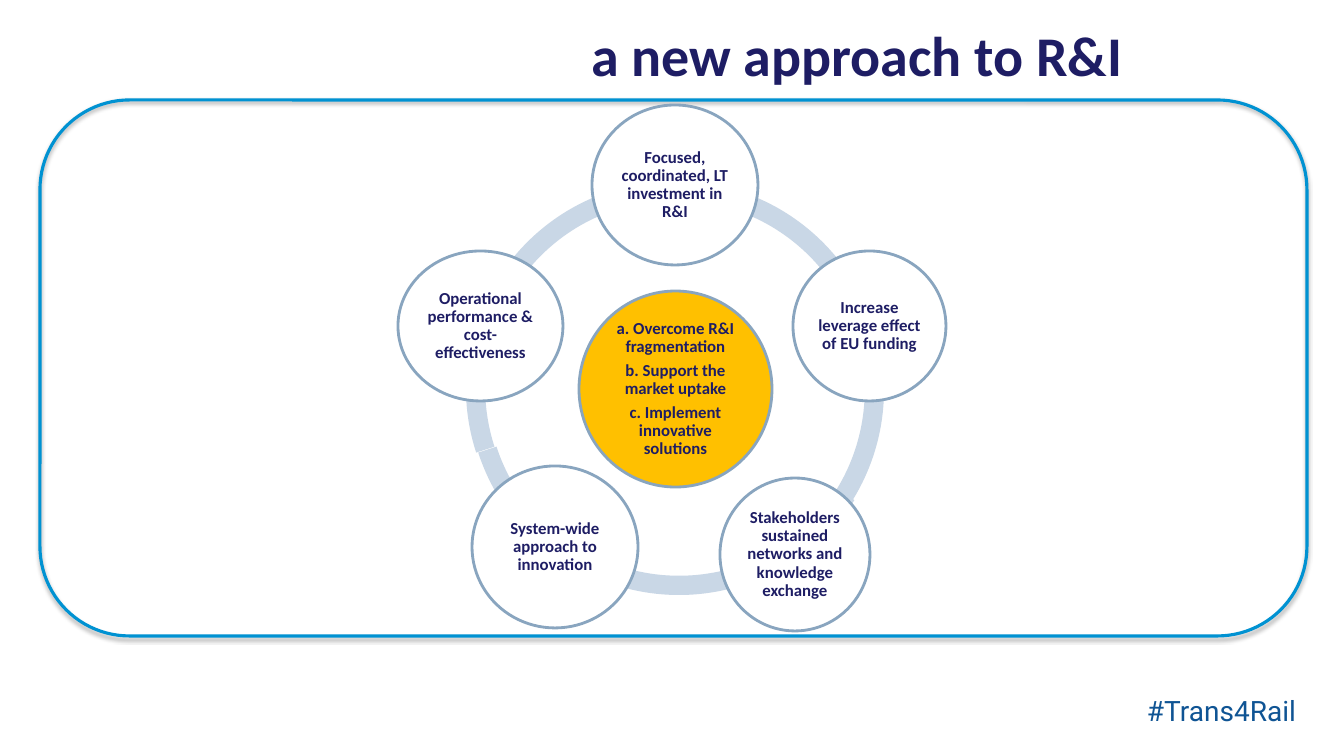
from lxml.etree import SubElement
from pptx import Presentation
from pptx.dml.color import RGBColor
from pptx.enum.shapes import MSO_SHAPE
from pptx.enum.text import MSO_ANCHOR, PP_ALIGN
from pptx.oxml.ns import qn
from pptx.util import Emu, Pt

SCALE = 914400 / 100.8
NAVY, SKY, STEEL, PALE = "1E1D64", "0092D2", "89A5BF", "C9D7E6"
RING = 418
ARC_DEPTH = 0.046

# left, top, start angle, end angle
ARCS = [
    (468, 179, 118.8, 162),
    (470, 177, 75.98, 117.76),
    (471, 176, 33.43, 76.64),
    (466, 181, 205.2, 32.4),
    (466, 179, 162, 205.2),
]

# left, top, width, height, fill, paragraphs
CIRCLES = [
    (579, 291, 193, 196, "FFC000", [
        "a. Overcome R&I fragmentation",
        "b. Support the market uptake",
        "c. Implement innovative solutions"]),
    (592, 105, 166, 160, "FFFFFF",
     ["Focused, coordinated, LT investment in R&I"]),
    (793, 251, 153, 150, "FFFFFF",
     ["Increase leverage effect of EU funding"]),
    (720, 478, 150, 153, "FFFFFF",
     ["Stakeholders sustained networks and knowledge exchange"]),
    (472, 466, 166, 162, "FFFFFF",
     ["System-wide approach to innovation"]),
    (398, 251, 165, 150, "FFFFFF",
     ["Operational performance & cost-effectiveness"]),
]


def px(n):
    return Emu(round(n * SCALE))


def color(code):
    return RGBColor.from_string(code)


def style(para, size, code, name="Calibri", bold=True, align=PP_ALIGN.CENTER):
    para.alignment = align
    font = para.font
    font.size, font.name, font.bold = Pt(size), name, bold
    font.color.rgb = color(code)


def add_form(slide, kind, box, fill=None, line=None, width=2):
    form = slide.shapes.add_shape(kind, *map(px, box))
    form.shadow.inherit = False
    if fill:
        form.fill.solid()
        form.fill.fore_color.rgb = color(fill)
    else:
        form.fill.background()
    if line:
        form.line.color.rgb = color(line)
        form.line.width = Pt(width)
    else:
        form.line.fill.background()
    return form


def add_frame(slide):
    frame = add_form(slide, MSO_SHAPE.ROUNDED_RECTANGLE,
                     (40, 100, 1267, 536), line=SKY, width=2.25)
    frame.adjustments[0] = 0.167
    effects = frame._element.spPr.find(qn("a:effectLst"))
    shadow = SubElement(effects, qn("a:outerShdw"), blurRad=str(Pt(3.1)),
                        dist=str(Pt(1.8)), dir="5400000", rotWithShape="0")
    tint = SubElement(shadow, qn("a:srgbClr"), val="000000")
    SubElement(tint, qn("a:alpha"), val="35000")


def add_arc(slide, left, top, start, end):
    arc = add_form(slide, MSO_SHAPE.BLOCK_ARC, (left, top, RING, RING), PALE)
    # Angles are stored in 60000ths of a degree, adjustments in 100000ths
    for i, value in enumerate((start * 0.6, end * 0.6, ARC_DEPTH)):
        arc.adjustments[i] = value


def add_circle(slide, left, top, width, height, fill, lines):
    circle = add_form(slide, MSO_SHAPE.OVAL, (left, top, width, height),
                      fill, STEEL)
    frame = circle.text_frame
    frame.word_wrap = True
    frame.vertical_anchor = MSO_ANCHOR.MIDDLE
    frame.margin_left = frame.margin_right = px(2)
    frame.margin_top = frame.margin_bottom = px(2)
    frame.text = "\n".join(lines)
    for para in frame.paragraphs:
        para.line_spacing = 0.9
        para.space_after = Pt(4.2)
        style(para, 12, NAVY)


def add_label(slide, box, text, size, code, name, bold):
    frame = slide.shapes.add_textbox(*map(px, box)).text_frame
    frame.word_wrap = True
    frame.text = text
    style(frame.paragraphs[0], size, code, name, bold, PP_ALIGN.RIGHT)


def main():
    deck = Presentation()
    deck.slide_width, deck.slide_height = px(1344), px(756)
    slide = deck.slides.add_slide(deck.slide_layouts[6])
    add_label(slide, (1106, 689, 200, 44), "#Trans4Rail", 20, "0F5494",
              "Roboto", False)
    add_frame(slide)
    add_label(slide, (283, 16, 849, 80), "a new approach to R&I", 40, NAVY,
              "Calibri", True)
    for arc in ARCS:
        add_arc(slide, *arc)
    for circle in CIRCLES:
        add_circle(slide, *circle)
    deck.save("out.pptx")


if __name__ == "__main__":
    main()
